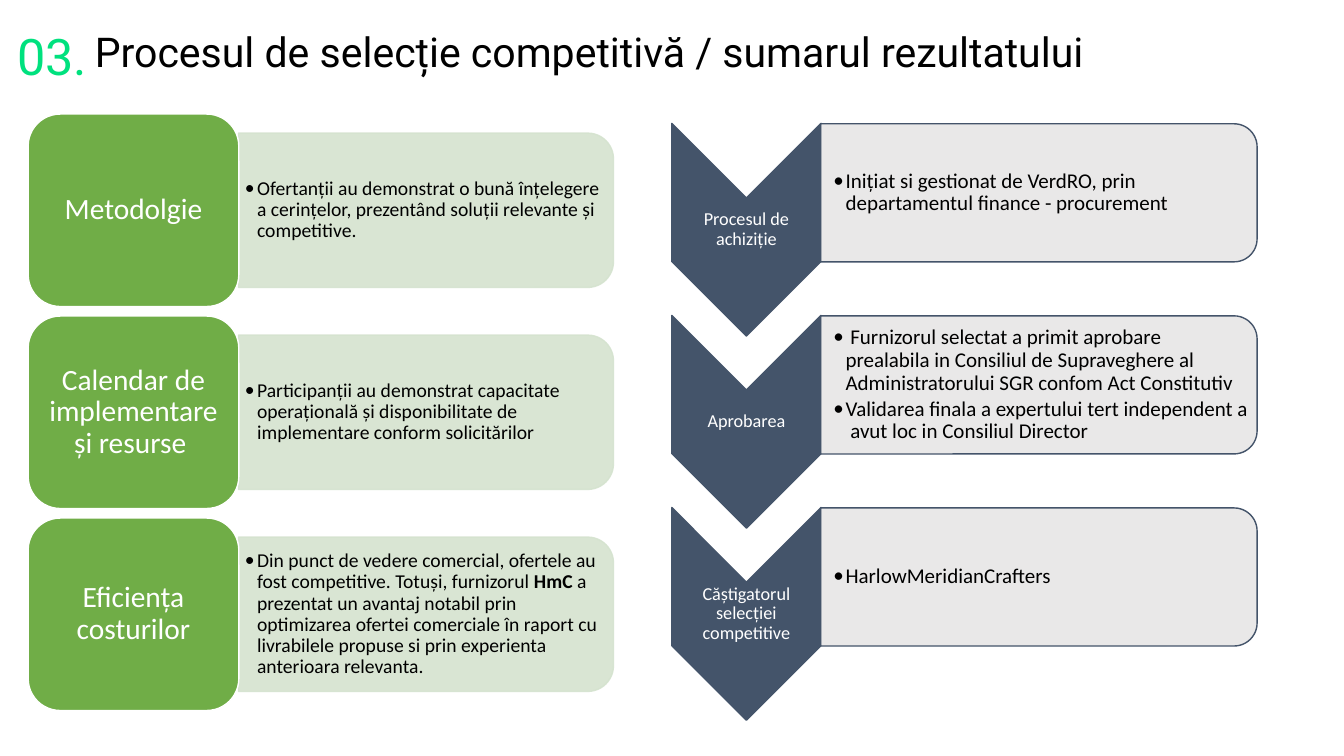
from dataclasses import dataclass

from lxml.etree import SubElement
from pptx import Presentation
from pptx.dml.color import RGBColor
from pptx.enum.shapes import MSO_SHAPE as Preset
from pptx.enum.text import MSO_ANCHOR as Anchor, MSO_AUTO_SIZE as AutoSize, PP_ALIGN as Align
from pptx.oxml.ns import qn
from pptx.util import Cm, Pt

BLACK, WHITE, MINT = "000000", "FFFFFF", "00E17E"
GREEN, PALE_GREEN = "70AD47", "D5E3CF"
SLATE, PALE_GREY = "44546A", "E7E6E6"


@dataclass(frozen=True)
class Box:
    """Area as it appears on the slide, in centimetres, placed by its vertical middle."""
    left: float
    middle: float
    width: float
    height: float

    def down(self, distance: float) -> "Box":
        return Box(self.left, self.middle + distance, self.width, self.height)


@dataclass(frozen=True)
class Style:
    size: float
    color: str = BLACK
    font: str = "Calibri"
    insets: tuple[float, float] = (0, 0)  # sides, top and bottom
    left_inset: float | None = None
    bullet: bool = False
    after: float = 0  # share of the text size


@dataclass(frozen=True)
class Row:
    heading: str
    points: list[list[str]]  # every second run of a point is bold


def rgb(color: str) -> RGBColor:
    return RGBColor.from_string(color)


def set_alpha(color_format_xml, percent: int) -> None:
    for color in color_format_xml.iter(qn("a:srgbClr")):
        SubElement(color, qn("a:alpha"), val=str(percent * 1000))


def add_outline(slide, preset, box: Box, fill: str, line: str, turned: bool = False):
    """Draw a preset; a turned one is rotated a quarter so that it fills the box."""
    width, height = (box.height, box.width) if turned else (box.width, box.height)
    left = box.left + (box.width - width) / 2
    shape = slide.shapes.add_shape(preset, Cm(left), Cm(box.middle - height / 2), Cm(width), Cm(height))
    shape.rotation = 90 if turned else 0
    shape.shadow.inherit = False
    shape.fill.solid()
    shape.fill.fore_color.rgb = rgb(fill)
    shape.line.color.rgb = rgb(line)
    shape.line.width = Pt(1)
    return shape


def add_panel(slide, box: Box, fill: str, line: str) -> None:
    panel = add_outline(slide, Preset.ROUND_2_SAME_RECTANGLE, box, fill, line, turned=True)
    properties = panel.element.spPr
    set_alpha(properties.find(qn("a:solidFill")), 90)
    if line == fill:
        set_alpha(properties.find(qn("a:ln")), 90)


def write(shape, points: list[list[str]], style: Style, spacing=0.9) -> None:
    frame = shape.text_frame
    frame.word_wrap = True
    frame.vertical_anchor = Anchor.MIDDLE
    sides, ends = style.insets
    frame.margin_left = Cm(sides if style.left_inset is None else style.left_inset)
    frame.margin_right = Cm(sides)
    frame.margin_top = frame.margin_bottom = Cm(ends)
    for index, runs in enumerate(points):
        paragraph = frame.add_paragraph() if index else frame.paragraphs[0]
        paragraph.alignment = Align.LEFT if style.bullet else Align.CENTER
        paragraph.line_spacing = spacing
        paragraph.space_after = Pt(round(style.size * style.after, 1))
        if style.bullet:
            paragraph.level = 1
            properties = paragraph._p.get_or_add_pPr()
            properties.set("marL", str(Cm(0.31)))
            properties.set("indent", str(-Cm(0.31)))
            SubElement(properties, qn("a:buFont"), typeface=style.font)
            SubElement(properties, qn("a:buChar"), char="•")
        for order, text in enumerate(runs):
            run = paragraph.add_run()
            run.text = text
            run.font.size = Pt(style.size)
            run.font.name = style.font
            run.font.bold = order % 2 == 1
            run.font.color.rgb = rgb(style.color)


def add_text(slide, box: Box, points: list[list[str]], style: Style) -> None:
    label = slide.shapes.add_textbox(
        Cm(box.left), Cm(box.middle - box.height / 2), Cm(box.width), Cm(box.height))
    write(label, points, style)


def add_heading(slide, place: tuple, text: str, style: Style, spacing: float) -> None:
    heading = slide.shapes.add_textbox(*(Cm(value) for value in place))
    write(heading, [[text]], style, Pt(spacing))
    heading.text_frame.vertical_anchor = Anchor.TOP
    heading.text_frame.auto_size = AutoSize.SHAPE_TO_FIT_TEXT
    heading.text_frame.paragraphs[0].alignment = Align.LEFT


CRITERIA = [
    Row("Metodolgie", [["Ofertanții au demonstrat o bună înțelegere a cerințelor, "
                        "prezentând soluții relevante și competitive."]]),
    Row("Calendar de implementare și resurse ", [[
        "Participanții au demonstrat capacitate operațională și disponibilitate de "
        "implementare conform solicitărilor"]]),
    Row("Eficiența costurilor", [[
        "Din punct de vedere comercial, ofertele au fost competitive. Totuși, furnizorul ",
        "HmC",
        " a prezentat un avantaj notabil prin optimizarea ofertei comerciale în raport cu "
        "livrabilele propuse si prin experienta anterioara relevanta."]]),
]
STAGES = [
    Row("Procesul de achiziție", [["Inițiat si gestionat de VerdRO, prin departamentul "
                                   "finance - procurement"]]),
    Row("Aprobarea", [
        [" Furnizorul selectat a primit aprobare prealabila in Consiliul de Supraveghere al "
         "Administratorului SGR confom Act Constitutiv"],
        ["Validarea finala a expertului tert independent a  avut loc in Consiliul Director"]]),
    Row("Căștigatorul selecției competitive", [["HarlowMeridianCrafters"]]),
]

# Left column: green cards (their round corners already inset the text)
CRITERIA_PITCH = 5.09
CARD = Box(0.71, 5.3, 5.31, 4.85)
CARD_PANEL = Box(6.01, 5.3, 9.45, 3.89)
CARD_NOTE = Box(6.02, 5.3, 9.25, 3.51)
CARD_STYLE = Style(21, WHITE, insets=(0.2, 0.1), after=0.35)
CARD_NOTE_STYLE = Style(14, insets=(0.15, 0.08), bullet=True, after=0.16)

# Right column: downward chevrons
STAGE_PITCH = 4.84
CHEVRON = Box(16.93, 5.79, 3.76, 5.36)
CHEVRON_LABEL = Box(16.93, 5.79, 3.76, 1.6)
STAGE_PANEL = Box(20.68, 4.86, 11, 3.48)
STAGE_NOTE = Box(20.7, 4.86, 10.82, 3.15)
CHEVRON_STYLE = Style(13, WHITE, insets=(0.02, 0.02), after=0.35)
STAGE_NOTE_STYLE = Style(15, insets=(0.02, 0.02), left_inset=0.3, bullet=True, after=0.16)


def main() -> None:
    deck = Presentation()
    deck.slide_width, deck.slide_height = Cm(33.87), Cm(19.05)
    slide = deck.slides.add_slide(deck.slide_layouts[6])

    # Title and section number
    add_heading(slide, (2.39, 0.89, 29.29, 1.07),
                "Procesul de selecție competitivă / sumarul rezultatului",
                Style(29.3, font="Roboto"), 28.8)
    add_heading(slide, (0.43, 0.48, 1.96, 1.63), "03.", Style(36, MINT, "Roboto"), 47.3)

    # Selection criteria
    for index, criterion in enumerate(CRITERIA):
        drop = index * CRITERIA_PITCH
        add_panel(slide, CARD_PANEL.down(drop), PALE_GREEN, PALE_GREEN)
        add_text(slide, CARD_NOTE.down(drop), criterion.points, CARD_NOTE_STYLE)
        card = add_outline(slide, Preset.ROUNDED_RECTANGLE, CARD.down(drop), GREEN, WHITE)
        write(card, [[criterion.heading]], CARD_STYLE)

    # Process stages
    for index, stage in enumerate(STAGES):
        drop = index * STAGE_PITCH
        add_outline(slide, Preset.CHEVRON, CHEVRON.down(drop), SLATE, SLATE, turned=True)
        add_text(slide, CHEVRON_LABEL.down(drop), [[stage.heading]], CHEVRON_STYLE)
        add_panel(slide, STAGE_PANEL.down(drop), PALE_GREY, SLATE)
        add_text(slide, STAGE_NOTE.down(drop), stage.points, STAGE_NOTE_STYLE)

    deck.save("out.pptx")


if __name__ == "__main__":
    main()
